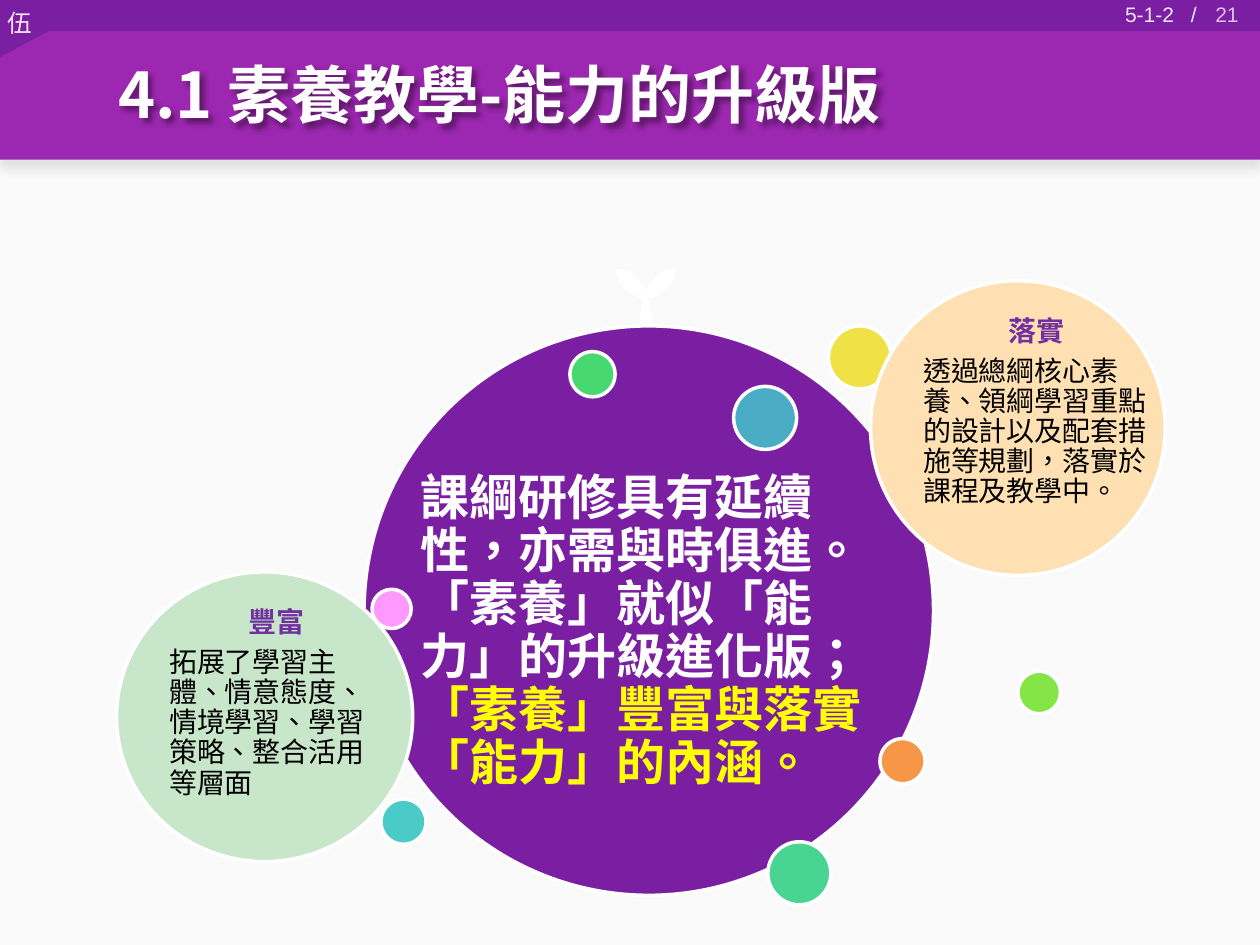
from lxml.etree import SubElement as Sub
from pptx import Presentation
from pptx.dml.color import RGBColor as RGB
from pptx.enum.shapes import MSO_SHAPE as Shape
from pptx.enum.text import MSO_ANCHOR as Anchor, PP_ALIGN as Align
from pptx.oxml.ns import qn
from pptx.util import Cm, Pt

WHITE = RGB(0xFF, 0xFF, 0xFF)
BLACK = RGB(0, 0, 0)
PAPER = RGB(0xFA, 0xFA, 0xFA)
PURPLE = RGB(0x9C, 0x27, 0xB0)
DEEP = RGB(0x7B, 0x1F, 0xA2)
VIOLET = RGB(0x70, 0x30, 0xA0)
PALE = RGB(0xF3, 0xE5, 0xF5)
LILAC = RGB(0xE1, 0xBE, 0xE7)
YELLOW = RGB(0xFF, 0xFF, 0)
PEACH = RGB(0xFF, 0xE0, 0xB2)
MINT = RGB(0xC8, 0xE6, 0xC9)
BLUE = RGB(0x4B, 0xAC, 0xC6)
TEAL = RGB(0x4A, 0xCB, 0xC8)
JADE = RGB(0x48, 0xD4, 0x91)
GREEN = RGB(0x47, 0xD8, 0x72)
PINK = RGB(0xFF, 0x99, 0xFF)
LIME = RGB(0x85, 0xE5, 0x46)
LEMON = RGB(0xF0, 0xE1, 0x46)
ORANGE = RGB(0xF7, 0x96, 0x46)

HAN = "Noto Sans CJK SC"


def put(obj, vals):
    for key, val in vals.items():
        setattr(obj, key, val)


def cast(node, alpha, blur, dist, angle):
    """Put an outer shadow into an effect list."""
    shade = Sub(node, qn("a:outerShdw"), blurRad=str(Pt(blur)), dist=str(Pt(dist)),
                dir=str(angle * 60000), algn="t", rotWithShape="0")
    tint = Sub(shade, qn("a:srgbClr"), val="000000")
    Sub(tint, qn("a:alpha"), val=str(alpha * 1000))


def bend(start, *curves):
    """Points along a chain of cubic curves."""
    pts, last = [start], start
    for one, two, end in curves:
        for n in range(1, 9):
            t = n / 8
            u = 1 - t
            pts.append(tuple(u**3 * a + 3 * u * u * t * b + 3 * u * t * t * c + t**3 * d
                             for a, b, c, d in zip(last, one, two, end)))
        last = end
    return pts


class Page:
    def __init__(self, slide, font=HAN, rim=2):
        self.slide, self.font, self.rim = slide, font, rim
        self.items = slide.shapes

    def paint(self, item, fill, line=None):
        item.shadow.inherit = False
        item.fill.solid()
        item.fill.fore_color.rgb = fill
        if line is None:
            item.line.fill.background()
        else:
            item.line.color.rgb = line
            item.line.width = Pt(self.rim)
        return item

    def rect(self, box, fill):
        return self.paint(self.items.add_shape(Shape.RECTANGLE, *map(Cm, box)), fill)

    def disc(self, x, y, wide, fill, high=None):
        box = map(Cm, (x, y, wide, high or wide))
        return self.paint(self.items.add_shape(Shape.OVAL, *box), fill, WHITE)

    def free(self, pts, fill):
        first, *rest = [(Cm(x), Cm(y)) for x, y in pts]
        pen = self.items.build_freeform(*first, scale=1.0)
        pen.add_line_segments(rest, close=True)
        return self.paint(pen.convert_to_shape(), fill)

    def text(self, box, paras, inset=None, anchor=Anchor.MIDDLE, wrap=True):
        """Each paragraph: text, font values, paragraph values."""
        item = self.items.add_textbox(*map(Cm, box))
        frame = item.text_frame
        put(frame, {"word_wrap": wrap, "vertical_anchor": anchor})
        if inset is not None:
            put(frame, {f"margin_{side}": Cm(inset)
                        for side in ("left", "top", "right", "bottom")})
        for n, (words, look, form) in enumerate(paras):
            para = frame.add_paragraph() if n else frame.paragraphs[0]
            put(para, form)
            para._p.get_or_add_pPr().set("hangingPunct", "0")
            for k, part in enumerate(words.split("\n")):
                if k:
                    para.add_line_break()
                run = para.add_run()
                run.text = part
                look = {"name": self.font, **look}
                color = look["color"]
                put(run.font, {key: val for key, val in look.items() if key != "color"})
                run.font.color.rgb = color
                props = run._r.get_or_add_rPr()
                props.set("lang", "zh-TW")
                Sub(props, qn("a:ea"), typeface=look["name"])
        return item

    def note(self, x, y, wide, high, fill, room, head, body):
        """Side disc with a heading and a passage."""
        self.disc(x, y, wide, fill, high)
        look = {"size": Pt(16)}
        form = {"line_spacing": Pt(17.25)}
        self.text((x + 0.88, y + 0.54, room, 4.14), [
            (head, {**look, "bold": True, "color": VIOLET},
             {**form, "alignment": Align.CENTER, "space_after": Pt(5.6)}),
            (body, {**look, "color": BLACK}, form),
        ], inset=0.18, anchor=Anchor.TOP)


deck = Presentation()
put(deck, {"slide_width": Cm(25.4), "slide_height": Cm(19.05)})
page = Page(deck.slides.add_slide(deck.slide_layouts[6]))

# Backdrop and header
page.rect((-0.03, 1.12, 25.48, 17.93), PAPER)
band = page.rect((-0.03, 0, 25.43, 3.22), PURPLE)
cast(band._element.spPr.find(qn("a:effectLst")), 10, 6, 4, 90)
page.rect((-0.03, -0.05, 25.43, 0.68), DEEP)
page.free([(-0.03, 0.63), (-0.03, 1.17), (0.97, 0.63)], DEEP)
page.text((-0.1, 0.03, 1.02, 0.86), [("伍", {"size": Pt(14), "color": PALE}, {})],
          anchor=Anchor.TOP, wrap=False)

# Main disc and message
page.disc(7.34, 6.57, 11.48, DEEP)
bold = {"size": Pt(28), "bold": True}
pitch = {"line_spacing": Pt(30.25)}
page.text((8.2, 8.66, 10.41, 8.13), [
    ("課綱研修具有延續性，亦需與時俱進。", {**bold, "color": WHITE}, pitch),
    ("「素養」就似「能力」的升級進化版；", {**bold, "color": WHITE}, pitch),
    ("「素養」豐富與落實\n「能力」的內涵。", {**bold, "color": YELLOW}, pitch),
], inset=0.28)

# Small discs
for dot in [
    (14.79, 7.79, 1.27, BLUE), (7.68, 16.11, 0.91, TEAL),
    (15.48, 16.97, 1.27, JADE), (11.49, 7.09, 0.91, GREEN),
    (7.5, 11.88, 0.79, PINK), (20.52, 13.53, 0.86, LIME),
    (16.7, 6.57, 1.27, LEMON), (17.74, 14.89, 0.91, ORANGE),
]:
    page.disc(*dot)

# Side discs
page.note(17.55, 5.66, 5.94, 5.94, PEACH, 4.94, "落實",
          "透過總綱核心素養、領綱學習重點的設計以及配套措施等規劃，落實於課程及教學中。")
page.note(2.35, 11.53, 5.97, 5.84, MINT, 4.7, "豐富",
          "拓展了學習主體、情意態度、情境學習、學習策略、整合活用等層面")

# Sprout: a leaf, its mirror and the stem
AXIS = 13.02
leaf = bend((13.03, 6.02),
            ((13.08, 5.97), (12.95, 5.69), (12.85, 5.61)),
            ((12.73, 5.51), (12.75, 5.44), (12.4, 5.41)),
            ((12.45, 5.66), (12.52, 5.74), (12.62, 5.84)),
            ((12.73, 5.94), (13, 6.07), (13.03, 6.02)))
side = bend((13.08, 5.94), ((13.08, 6.02), (13.13, 6.35), (13.16, 6.55)))
flip = [(2 * AXIS - x, y) for x, y in side]
page.free(leaf, WHITE)
page.free(side + flip[::-1], WHITE)
page.free([(2 * AXIS - x, y) for x, y in leaf], WHITE)

# Title and page marks
small = {"name": "Arial", "size": Pt(12)}
page.text((19.3, -0.23, 5.92, 1.02),
          [("21", {**small, "color": LILAC}, {"alignment": Align.RIGHT})])
title = page.text((2.13, 0.53, 21.97, 2.69), [
    ("4.1 素養教學-能力的升級版", {"size": Pt(36), "bold": True, "color": WHITE}, {})])
cast(Sub(title._element.spPr, qn("a:effectLst")), 40, 3, 3, 45)
mark = page.text((22.43, -0.1, 2.08, 0.76), [("5-1-2\t/", {**small, "color": PALE}, {})],
                 anchor=Anchor.TOP)
tabs = Sub(mark.text_frame.paragraphs[0]._p.get_or_add_pPr(), qn("a:tabLst"))
Sub(tabs, qn("a:tab"), pos=str(Cm(1.33)), algn="l")

deck.save("out.pptx")
